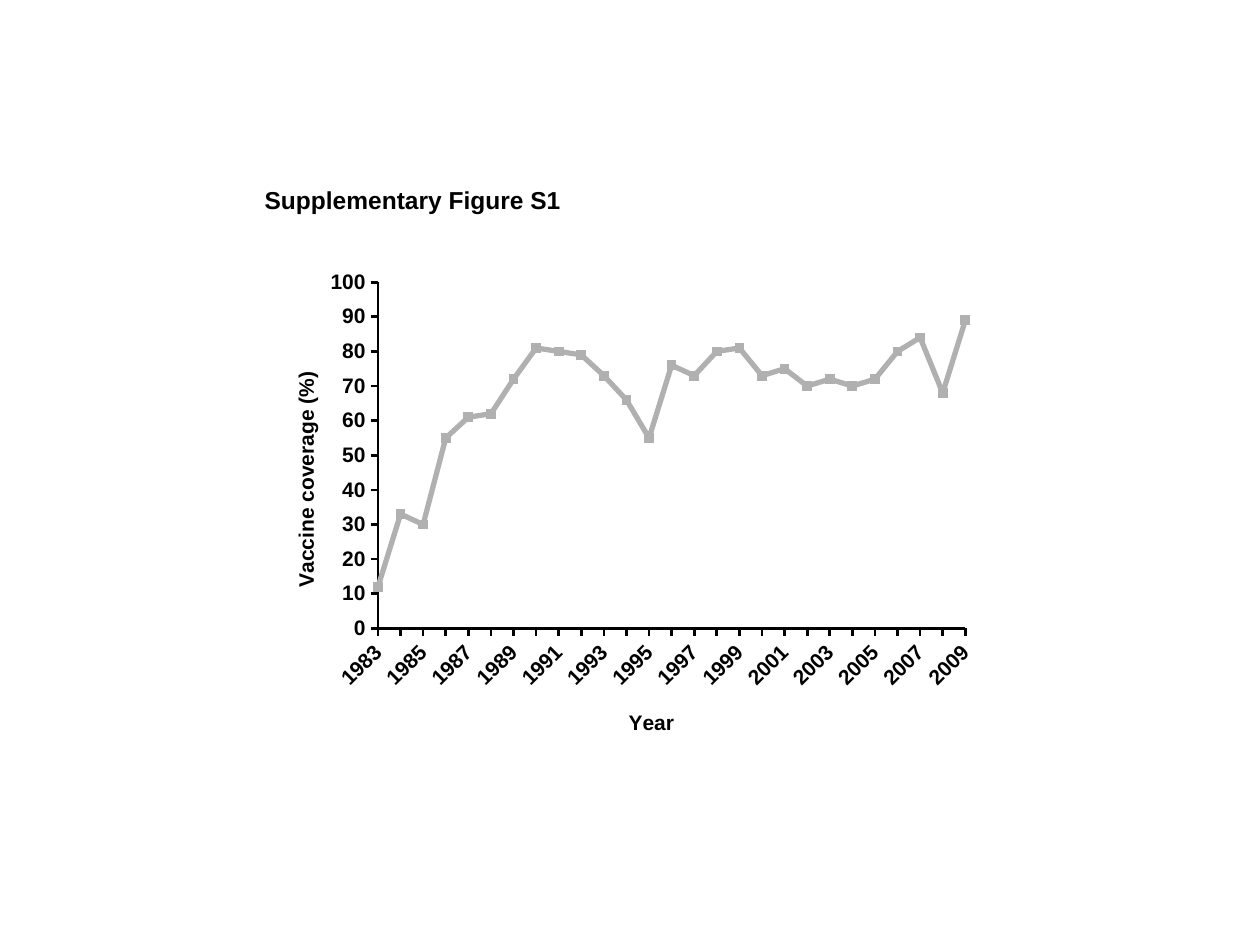
import pptx
import pptx.chart.data
import pptx.dml.color
import pptx.enum.chart
import pptx.enum.text
import pptx.oxml
import pptx.oxml.ns
import pptx.util

Pt = pptx.util.Pt
qn = pptx.oxml.ns.qn
COLORS = {"ink": "000000", "series": "B0B0B0"}
YEARS = [str(year) for year in range(1983, 2010)]
COVERAGE = [12, 33, 30, 55, 61, 62, 72, 81, 80, 79, 73, 66, 55, 76,
            73, 80, 81, 73, 75, 70, 72, 70, 72, 80, 84, 68, 89]


def color(name):
    return pptx.dml.color.RGBColor.from_string(COLORS[name])


def style_font(font, size=12, ink="ink"):
    font.name = "Arial"
    font.size = Pt(size)
    font.bold = True
    font.color.rgb = color(ink)


def write_text(frame, text, **style):
    para = frame.paragraphs[0]
    span = para.add_run()
    span.text = text
    style_font(span.font, **style)
    return para


def style_line(line, width, ink):
    line.color.rgb = color(ink)
    line.width = Pt(width)


def make_element(tag, **attributes):
    element = pptx.oxml.parse_xml(
        f'<c:{tag} xmlns:c="http://schemas.openxmlformats.org/drawingml/2006/chart"/>')
    for name, value in attributes.items():
        element.set(name, str(value))
    return element


def set_layout(parent, index, target=None, **position):
    for old in parent.findall(qn("c:layout")):
        parent.remove(old)
    layout, manual = make_element("layout"), make_element("manualLayout")
    if target:
        manual.append(make_element("layoutTarget", val=target))
    for mode in ("xMode", "yMode"):
        manual.append(make_element(mode, val="edge"))
    for name, value in position.items():
        manual.append(make_element(name, val=value))
    layout.append(manual)
    parent.insert(index, layout)


def add_title(page, text):
    box = page.shapes.title
    box.left, box.top, box.width, box.height = Pt(144), Pt(102), Pt(184), Pt(24.5)
    frame = box.text_frame
    frame.word_wrap = False
    frame.auto_size = pptx.enum.text.MSO_AUTO_SIZE.SHAPE_TO_FIT_TEXT
    frame.vertical_anchor = pptx.enum.text.MSO_ANCHOR.TOP
    para = write_text(frame, text, size=14)
    para.alignment = pptx.enum.text.PP_ALIGN.LEFT


def style_axis(axis, title, x, y, rotation=0):
    axis.has_major_gridlines = False
    axis.major_tick_mark = pptx.enum.chart.XL_TICK_MARK.OUTSIDE
    axis.minor_tick_mark = pptx.enum.chart.XL_TICK_MARK.NONE
    style_line(axis.format.line, 1.5, "ink")
    style_font(axis.tick_labels.font)
    frame = axis.axis_title.text_frame
    write_text(frame, title)
    element = axis.axis_title._element
    element.find(".//" + qn("a:bodyPr")).set("rot", str(rotation * 60000))
    set_layout(element, 1, x=x, y=y)


def style_years(axis):
    style_axis(axis, "Year", 0.5, 0.9)
    element = axis._element
    element.find(qn("c:txPr")).find(qn("a:bodyPr")).set("rot", str(-45 * 60000))
    last = element.find(qn("c:noMultiLvlLbl"))
    last.addprevious(make_element("tickLblSkip", val=2))
    last.addprevious(make_element("tickMarkSkip", val=1))


def style_coverage(axis):
    style_axis(axis, "Vaccine coverage (%)", 0.05, 0.23, rotation=-90)
    axis.minimum_scale, axis.maximum_scale = 0, 100
    element = axis._element
    for old in element.findall(qn("c:crossBetween")):
        element.remove(old)
    element.find(qn("c:crosses")).addnext(make_element("crossBetween", val="midCat"))
    axis.major_unit = 10


def style_series(series):
    series.smooth = False
    style_line(series.format.line, 3, "series")
    marker = series.marker
    marker.style = pptx.enum.chart.XL_MARKER_STYLE.SQUARE
    marker.size = 5
    marker.format.fill.solid()
    marker.format.fill.fore_color.rgb = color("series")
    style_line(marker.format.line, 0.75, "series")


def add_coverage_chart(page):
    data = pptx.chart.data.CategoryChartData()
    data.categories = YEARS
    data.add_series("Vaccine coverage", COVERAGE)
    chart = page.shapes.add_chart(
        pptx.enum.chart.XL_CHART_TYPE.LINE_MARKERS,
        Pt(144), Pt(144), Pt(426), Pt(288), data).chart
    style_font(chart.font)
    chart.has_title = False
    chart.has_legend = False
    plot = chart.plots[0]
    plot.vary_by_categories = False
    style_series(plot.series[0])
    style_years(chart.category_axis)
    style_coverage(chart.value_axis)
    area = chart._chartSpace.find(".//" + qn("c:plotArea"))
    set_layout(area, 0, target="inner", x=0.169, y=0.06, w=0.788, h=0.687)


def main():
    deck = pptx.Presentation()
    deck.slide_width, deck.slide_height = Pt(720), Pt(540)
    page = deck.slides.add_slide(deck.slide_layouts.get_by_name("Title Only"))
    add_title(page, "Supplementary Figure S1")
    add_coverage_chart(page)
    deck.save("out.pptx")


if __name__ == "__main__":
    main()
